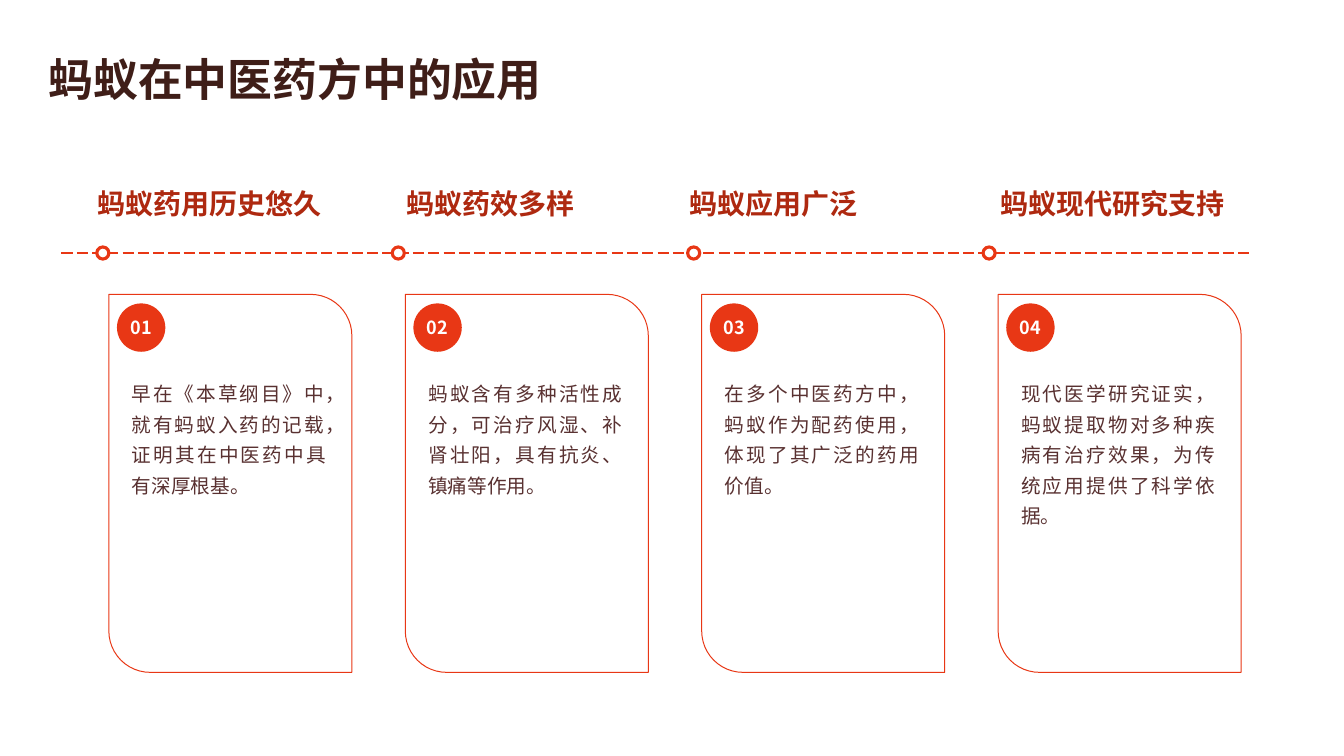
"""Build a four-step timeline slide on ants in Chinese medicine formulas."""
import pptx
import pptx.dml.color
import pptx.enum.dml
import pptx.enum.shapes
import pptx.enum.text
import pptx.oxml.ns
import pptx.util
import lxml.etree

Inches = pptx.util.Inches
SHAPES = pptx.enum.shapes.MSO_SHAPE
ALIGN = pptx.enum.text.PP_ALIGN
ANCHOR = pptx.enum.text.MSO_ANCHOR
FONT = "Noto Sans CJK SC"
COLORS = {
    "title": "3F1E18",
    "heading": "AE2910",
    "body": "593131",
    "accent": "E83715",
    "white": "FFFFFF",
}
STEPS = [
    ("蚂蚁药用历史悠久", 0.87, "早在《本草纲目》中，就有蚂蚁入药的记载，证明其在中医药中具有深厚根基。"),
    ("蚂蚁药效多样", 3.93, "蚂蚁含有多种活性成分，可治疗风湿、补肾壮阳，具有抗炎、镇痛等作用。"),
    ("蚂蚁应用广泛", 6.74, "在多个中医药方中，蚂蚁作为配药使用，体现了其广泛的药用价值。"),
    ("蚂蚁现代研究支持", 9.82, "现代医学研究证实，蚂蚁提取物对多种疾病有治疗效果，为传统应用提供了科学依据。"),
]
CARD_LEFT, CARD_TOP, CARD_PITCH = 1.08, 2.92, 2.94
CARD_WIDTH, CARD_HEIGHT = 2.41, 3.75
DOT_LEFT, DOT_PITCH, DOT_SIZE = 0.96, 2.93, 0.12
TIMELINE_Y = 2.51
BADGE_SIZE = 0.48


def color(name):
    return pptx.dml.color.RGBColor.from_string(COLORS[name])


def write(shape, text, size, tint, align=ALIGN.LEFT, bold=True):
    frame = shape.text_frame
    frame.word_wrap = True
    frame.auto_size = pptx.enum.text.MSO_AUTO_SIZE.NONE
    paragraph = frame.paragraphs[0]
    paragraph.alignment = align
    run = paragraph.add_run()
    run.text = text
    run.font.size = pptx.util.Pt(size)
    run.font.bold = bold
    run.font.name = FONT
    run.font.color.rgb = color(tint)
    east_asian = lxml.etree.SubElement(run.font._element, pptx.oxml.ns.qn("a:ea"))
    east_asian.set("typeface", FONT)
    return paragraph


deck = pptx.Presentation()
deck.slide_width, deck.slide_height = Inches(13.33), Inches(7.5)
slide = deck.slides.add_slide(deck.slide_layouts[5])

title = slide.shapes.title
title.left, title.top = Inches(0.38), Inches(0.33)
title.width, title.height = Inches(12.57), Inches(0.79)
title.text_frame.vertical_anchor = ANCHOR.MIDDLE
write(title, "蚂蚁在中医药方中的应用", 32, "title").line_spacing = 1.2

timeline = slide.shapes.add_connector(
    pptx.enum.shapes.MSO_CONNECTOR.STRAIGHT,
    Inches(0.61), Inches(TIMELINE_Y), Inches(12.42), Inches(TIMELINE_Y))
timeline.line.color.rgb = color("accent")
timeline.line.width = pptx.util.Pt(1)
timeline.line.dash_style = pptx.enum.dml.MSO_LINE.LONG_DASH
lxml.etree.SubElement(timeline._element.spPr, pptx.oxml.ns.qn("a:effectLst"))

for index, (heading, heading_left, body) in enumerate(STEPS):
    card_left = CARD_LEFT + index * CARD_PITCH

    dot = slide.shapes.add_shape(
        SHAPES.OVAL, Inches(DOT_LEFT + index * DOT_PITCH),
        Inches(TIMELINE_Y - DOT_SIZE / 2), Inches(DOT_SIZE), Inches(DOT_SIZE))
    dot.shadow.inherit = False
    dot.fill.solid()
    dot.fill.fore_color.rgb = color("white")
    dot.line.color.rgb = color("accent")
    dot.line.width = pptx.util.Pt(2.25)

    card = slide.shapes.add_shape(
        SHAPES.ROUND_2_DIAG_RECTANGLE, Inches(card_left), Inches(CARD_TOP),
        Inches(CARD_WIDTH), Inches(CARD_HEIGHT))
    card.adjustments[0], card.adjustments[1] = 0, 0.17
    card.shadow.inherit = False
    card.fill.background()
    card.line.color.rgb = color("accent")
    card.line.width = pptx.util.Pt(0.7)

    badge = slide.shapes.add_shape(
        SHAPES.OVAL, Inches(card_left + 0.08), Inches(CARD_TOP + 0.09),
        Inches(BADGE_SIZE), Inches(BADGE_SIZE))
    badge.shadow.inherit = False
    badge.fill.solid()
    badge.fill.fore_color.rgb = color("accent")
    badge.line.fill.background()
    number = badge.text_frame
    number.margin_left = number.margin_right = number.margin_top = number.margin_bottom = 0
    number.vertical_anchor = ANCHOR.MIDDLE
    write(badge, f"{index + 1:02}", 12.9, "white", ALIGN.CENTER)

    heading_box = slide.shapes.add_textbox(
        Inches(heading_left), Inches(1.8), Inches(2.63), Inches(0.44))
    write(heading_box, heading, 20, "heading")

    body_box = slide.shapes.add_textbox(
        Inches(card_left + 0.13), Inches(3.67), Inches(2.12), Inches(2.82))
    paragraph = write(body_box, body, 14, "body", ALIGN.JUSTIFY, bold=False)
    paragraph.line_spacing = 1.3
    paragraph.space_before = paragraph.space_after = pptx.util.Pt(3)

deck.save("out.pptx")
